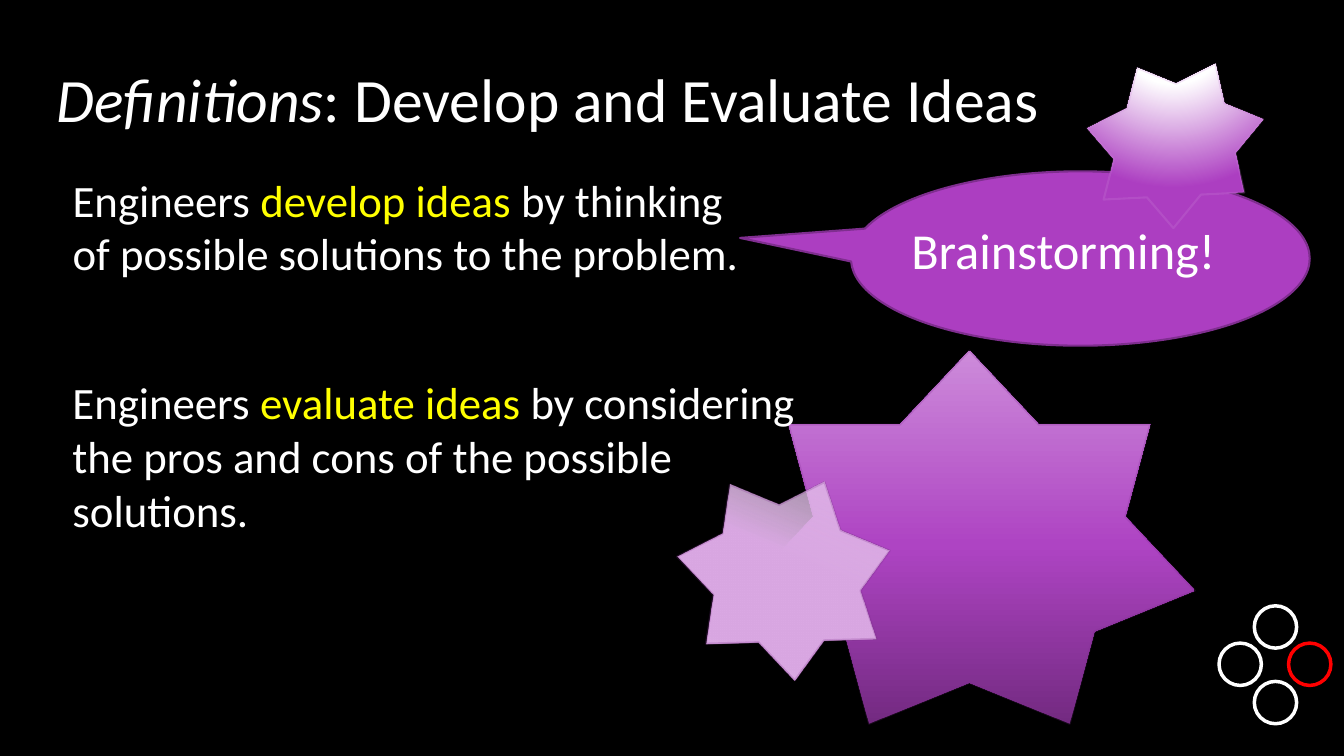
from lxml import etree
from pptx import Presentation
from pptx.dml.color import RGBColor
from pptx.enum.shapes import MSO_SHAPE
from pptx.enum.text import MSO_ANCHOR, MSO_AUTO_SIZE, PP_ALIGN
from pptx.oxml import parse_xml
from pptx.oxml.ns import nsdecls, qn
from pptx.util import Inches, Pt

BLACK = RGBColor(0x00, 0x00, 0x00)
WHITE = RGBColor(0xFF, 0xFF, 0xFF)
YELLOW = RGBColor(0xFF, 0xFF, 0x00)
RED = RGBColor(0xFF, 0x00, 0x00)
PURPLE = RGBColor(0xAC, 0x3E, 0xC1)
DARK_PURPLE = RGBColor(0x7F, 0x2E, 0x8F)
LIGHT_PURPLE = RGBColor(0xCD, 0x8B, 0xDA)
DEEP_PLUM = RGBColor(0x73, 0x2A, 0x81)
ORCHID = RGBColor(0xAE, 0x44, 0xC3)
PALE_LILAC = RGBColor(0xFB, 0xF5, 0xFC)
LILAC = RGBColor(0xDA, 0xA8, 0xE3)
SOFT_LILAC = RGBColor(0xE6, 0xC5, 0xEC)

UPWARD = '<a:lin ang="16200000" scaled="0"/>'
DOWNWARD = '<a:lin ang="5400000" scaled="0"/>'
FROM_TOP = ('<a:path path="circle">'
            '<a:fillToRect l="50000" t="-80000" r="50000" b="180000"/></a:path>')


def place(shape, left, top, width, height):
    """Set the position and size of a shape in inches."""
    shape.left, shape.top = Inches(left), Inches(top)
    shape.width, shape.height = Inches(width), Inches(height)


def add_outlined(slide, kind, box, line_color, line_width):
    """Add a preset shape with an outline and no shadow."""
    shape = slide.shapes.add_shape(kind, *map(Inches, box))
    shape.shadow.inherit = False
    shape.line.color.rgb = line_color
    shape.line.width = Pt(line_width)
    return shape


def add_star(slide, box, rotation, stops, direction, line_color):
    """Add a seven-pointed star with a gradient and a faint outline."""
    star = add_outlined(slide, MSO_SHAPE.STAR_7_POINT, box, line_color, 1.5)
    star.rotation = rotation
    stop_xml = "".join(
        f'<a:gs pos="{position * 1000}"><a:srgbClr val="{color}">'
        f'<a:alpha val="{alpha * 1000}"/></a:srgbClr></a:gs>'
        for position, color, alpha in stops)
    gradient = parse_xml(f'<a:gradFill {nsdecls("a")} rotWithShape="1">'
                         f'<a:gsLst>{stop_xml}</a:gsLst>{direction}</a:gradFill>')
    properties = star._element.spPr
    properties.find(qn("a:prstGeom")).addnext(gradient)
    line_fill = properties.find(qn("a:ln")).find(qn("a:solidFill"))
    etree.SubElement(line_fill[0], qn("a:alpha"), val="22000")


def add_ring(slide, left, top, color):
    """Add one open circle of the step marker."""
    ring = add_outlined(slide, MSO_SHAPE.OVAL, (left, top, 0.42, 0.42), color, 2.5)
    ring.fill.background()


def write(frame, size, runs, space_after=0):
    """Write one left-aligned paragraph of (text, color, italic) runs."""
    frame.word_wrap = True
    frame.auto_size = MSO_AUTO_SIZE.NONE
    paragraph = frame.paragraphs[0]
    properties = paragraph._p.get_or_add_pPr()
    properties.set("marL", "0")
    properties.set("indent", "0")
    etree.SubElement(properties, qn("a:buNone"))
    paragraph.alignment = PP_ALIGN.LEFT
    paragraph.space_before = Pt(0)
    paragraph.space_after = Pt(space_after)
    paragraph.font.size = Pt(size)
    paragraph.font.name = "Calibri"
    for text, color, italic in runs:
        run = paragraph.add_run()
        run.text = text
        run.font.color.rgb = color
        if italic:
            run.font.italic = True


def write_definition(frame, term, meaning):
    """Write a definition sentence with its term highlighted."""
    write(frame, 32, [("Engineers ", WHITE, False), (term, YELLOW, False),
                      (meaning, WHITE, False)], 10)


def add_text(slide, box):
    """Add an empty text box and return its frame."""
    return slide.shapes.add_textbox(*map(Inches, box)).text_frame


def main():
    """Build the definitions slide and save it."""
    deck = Presentation()
    deck.slide_width, deck.slide_height = Inches(13.33), Inches(7.5)
    slide = deck.slides.add_slide(deck.slide_layouts[1])
    slide.background.fill.solid()
    slide.background.fill.fore_color.rgb = BLACK

    title, develop = slide.placeholders
    place(title, 0.46, 0.53, 11.08, 0.89)
    title.text_frame.vertical_anchor = MSO_ANCHOR.MIDDLE
    write(title.text_frame, 44, [("Definitions", WHITE, True),
                                 (": Develop and Evaluate Ideas", WHITE, False)])

    add_star(slide, (7.38, 3.48, 4.47, 3.7), 0,
             [(0, DEEP_PLUM, 100), (48, ORCHID, 100), (100, LIGHT_PURPLE, 100)],
             UPWARD, DARK_PURPLE)
    add_star(slide, (6.74, 4.71, 2.14, 1.93), 22.4,
             [(0, PALE_LILAC, 39), (45, LILAC, 100), (75, LILAC, 100),
              (100, SOFT_LILAC, 100)], DOWNWARD, DARK_PURPLE)

    place(develop, 0.62, 1.66, 7.07, 1.78)
    write_definition(develop.text_frame, "develop ideas ",
                     "by thinking of possible solutions to the problem.")
    for left, top, color in [(12.09, 6.38, WHITE), (12.44, 6.01, WHITE),
                             (12.44, 6.76, WHITE), (12.78, 6.38, RED)]:
        add_ring(slide, left, top, color)
    write_definition(add_text(slide, (0.62, 3.67, 7.54, 1.77)), "evaluate ideas ",
                     "by considering the pros and cons of the possible solutions.")

    callout = add_outlined(slide, MSO_SHAPE.OVAL_CALLOUT, (8.44, 1.7, 4.55, 1.73),
                           DARK_PURPLE, 1.5)
    callout.adjustments[0], callout.adjustments[1] = -0.742, -0.118
    callout.fill.solid()
    callout.fill.fore_color.rgb = PURPLE
    write(add_text(slide, (8.94, 2.12, 3.5, 0.8)), 36,
          [("Brainstorming!", WHITE, False)])
    add_star(slide, (10.75, 0.59, 1.77, 1.58), 333.3,
             [(0, WHITE, 100), (35, WHITE, 100), (100, PURPLE, 100)],
             FROM_TOP, LIGHT_PURPLE)
    deck.save("out.pptx")


if __name__ == "__main__":
    main()
